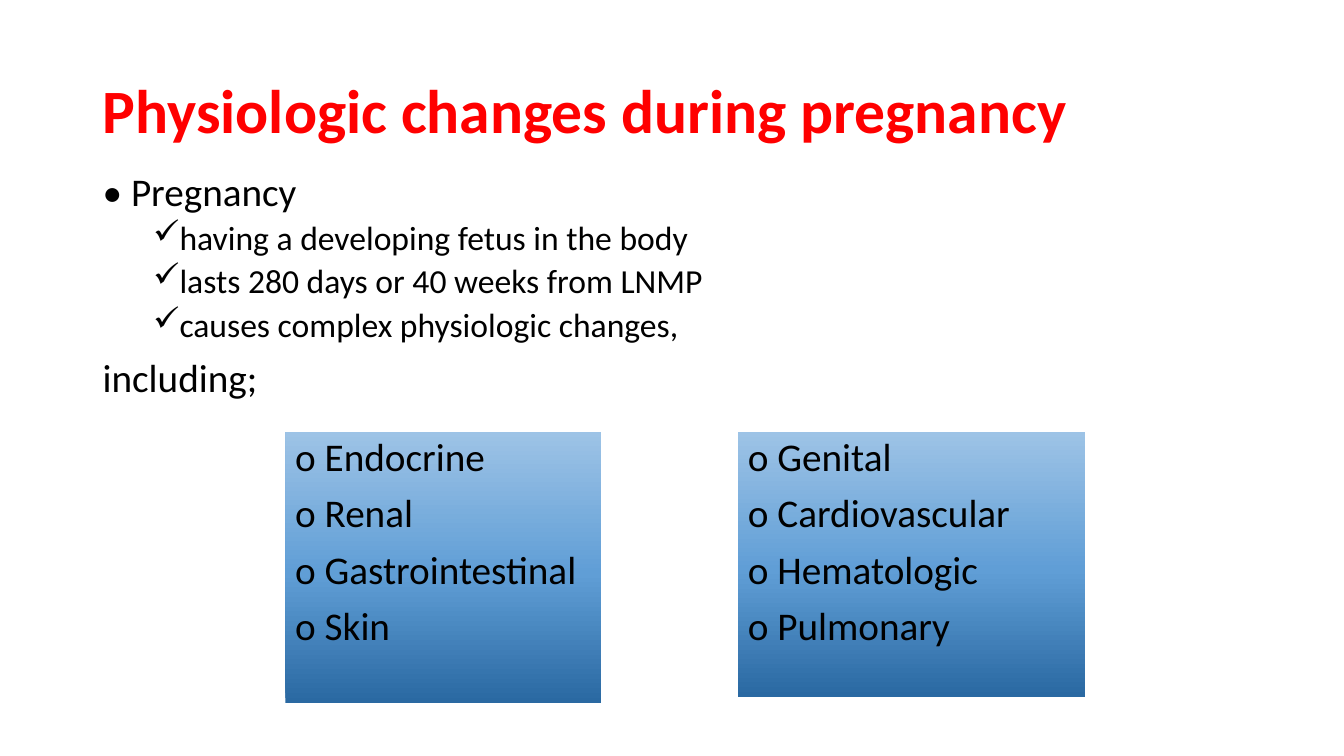
from copy import deepcopy

from lxml import etree
from pptx import Presentation
from pptx.dml.color import RGBColor
from pptx.enum.shapes import MSO_SHAPE
from pptx.enum.text import MSO_ANCHOR, PP_ALIGN
from pptx.oxml.ns import qn
from pptx.util import Inches, Pt

RECTANGLE = MSO_SHAPE.RECTANGLE
TOP = MSO_ANCHOR.TOP
MIDDLE = MSO_ANCHOR.MIDDLE
LEFT = PP_ALIGN.LEFT

TITLE = {"size": 44, "color": "FF0000", "bold": True, "before": 0}
BODY = {"size": 28, "color": "000000", "bold": False, "before": 10}
CHECKED = {**BODY, "size": 24, "before": 5, "bullet": "✓"}


def rgb(value):
    return RGBColor.from_string(value)


class SlideBuilder:
    font = "Calibri"
    gradient = ((0, "2A69A2"), (0.48, "609ED6"), (1, "9DC3E6"))

    def __init__(self, slide):
        self.slide = slide

    def text(self, box, lines, anchor=TOP):
        area = self.slide.shapes.add_textbox(*map(Inches, box))
        self.fill_frame(area.text_frame, lines, anchor)

    def panel(self, box, systems):
        panel = self.slide.shapes.add_shape(RECTANGLE, *map(Inches, box))
        panel.shadow.inherit = False
        panel.line.fill.background()
        panel.fill.gradient()
        panel.fill.gradient_angle = 90
        stops = panel._element.spPr.find(qn("a:gradFill")).find(qn("a:gsLst"))
        stops.append(deepcopy(stops[0]))
        for stop, (position, color) in zip(panel.fill.gradient_stops, self.gradient):
            stop.position = position
            stop.color.rgb = rgb(color)
        self.fill_frame(panel.text_frame, [(f"o {name}", BODY) for name in systems], TOP)

    def fill_frame(self, frame, lines, anchor):
        frame.word_wrap = True
        frame.vertical_anchor = anchor
        for index, (words, style) in enumerate(lines):
            paragraph = frame.add_paragraph() if index else frame.paragraphs[0]
            layout = {
                "alignment": LEFT,
                "line_spacing": 0.9,
                "space_before": Pt(style["before"]),
            }
            for name, value in layout.items():
                setattr(paragraph, name, value)
            if "bullet" in style:
                self.bullet(paragraph, style["bullet"])
            run = paragraph.add_run()
            run.text = words
            letters = {
                "name": self.font,
                "size": Pt(style["size"]),
                "bold": style["bold"],
            }
            for name, value in letters.items():
                setattr(run.font, name, value)
            run.font.color.rgb = rgb(style["color"])

    def bullet(self, paragraph, mark):
        paragraph.level = 1
        properties = paragraph._p.get_or_add_pPr()
        properties.set("marL", str(Inches(0.75)))
        properties.set("indent", str(Inches(-0.25)))
        etree.SubElement(properties, qn("a:buChar"), char=mark)


def main():
    presentation = Presentation()
    presentation.slide_width = Inches(13.33)
    presentation.slide_height = Inches(7.5)
    builder = SlideBuilder(presentation.slides.add_slide(presentation.slide_layouts[6]))

    builder.text(
        (0.92, 0.4, 11.5, 1.45),
        [("Physiologic changes during pregnancy", TITLE)],
        MIDDLE,
    )
    builder.text(
        (0.92, 1.66, 11.5, 2.86),
        [
            ("• Pregnancy", BODY),
            ("having a developing fetus in the body", CHECKED),
            ("lasts 280 days or 40 weeks from LNMP", CHECKED),
            ("causes complex physiologic changes,", CHECKED),
            ("including;", BODY),
        ],
    )
    builder.panel(
        (7.32, 4.29, 3.44, 2.62),
        ("Genital", "Cardiovascular", "Hematologic", "Pulmonary"),
    )
    builder.panel(
        (2.83, 4.29, 3.13, 2.68),
        ("Endocrine", "Renal", "Gastrointestinal", "Skin"),
    )
    presentation.save("out.pptx")


if __name__ == "__main__":
    main()
